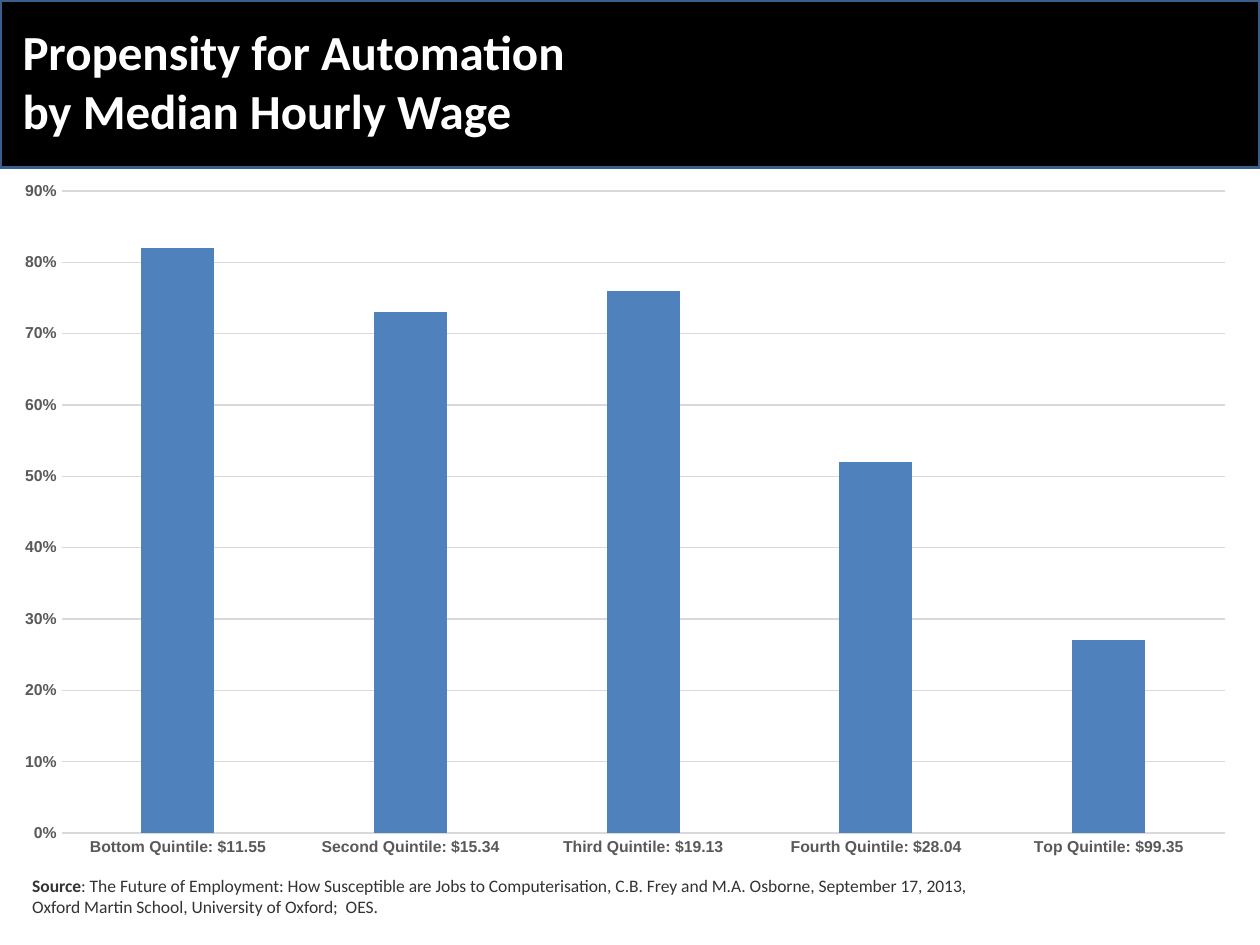
from copy import deepcopy

from pptx import Presentation
from pptx.chart.data import CategoryChartData
from pptx.dml.color import RGBColor
from pptx.enum.chart import XL_CHART_TYPE as ChartType, XL_TICK_MARK as Tick
from pptx.enum.shapes import MSO_SHAPE as Shape
from pptx.enum.text import MSO_ANCHOR as Anchor, PP_ALIGN as Align
from pptx.oxml.ns import qn
from pptx.util import Cm, Pt

BLACK = RGBColor(0x00, 0x00, 0x00)
WHITE = RGBColor(0xFF, 0xFF, 0xFF)
BAND_EDGE = RGBColor(0x3A, 0x5F, 0x8C)
BAR_BLUE = RGBColor(0x4F, 0x81, 0xBD)
GRID_GREY = RGBColor(0xD9, 0xD9, 0xD9)
AXIS_GREY = RGBColor(0x59, 0x59, 0x59)
SOURCE_GREY = RGBColor(0x33, 0x33, 0x33)

WAGE_GROUPS = {
    "Bottom Quintile: $11.55": 0.82,
    "Second Quintile: $15.34": 0.73,
    "Third Quintile: $19.13": 0.76,
    "Fourth Quintile: $28.04": 0.52,
    "Top Quintile: $99.35": 0.27,
}
SOURCE_LINES = [
    [("Source", True),
     (": The Future of Employment: How Susceptible are Jobs to Computerisation, "
      "C.B. Frey and M.A. Osborne, September 17, 2013,", False)],
    [("Oxford Martin School, University of Oxford;  OES.", False)],
]


def set_font(font, name, size, color, bold=False):
    font.name = name
    font.size = Pt(size)
    font.bold = bold
    font.color.rgb = color


def set_line(line, color, width):
    line.color.rgb = color
    line.width = Pt(width)


def add_band(s, width, height):
    sp = s.shapes.add_shape(Shape.RECTANGLE, 0, 0, width, height)
    sp.shadow.inherit = False
    sp.fill.solid()
    sp.fill.fore_color.rgb = BLACK
    set_line(sp.line, BAND_EDGE, 2)
    return sp


def set_title(s, text, band):
    sp = s.shapes.title
    sp.left, sp.top, sp.width, sp.height = Cm(0.2), Cm(0.3), Cm(20.32), Cm(2.64)
    tf = sp.text_frame
    tf.text = text
    tf.vertical_anchor = Anchor.MIDDLE
    p = tf.paragraphs[0]
    p.alignment = Align.LEFT
    for r in p.runs:
        set_font(r.font, "Calibri", 28, WHITE, True)
    for br in p._p.findall(qn("a:br")):
        br.append(deepcopy(p.runs[0]._r.rPr))
    band._element.addnext(sp._element)


def style_axis(axis):
    axis.major_tick_mark = axis.minor_tick_mark = Tick.NONE
    set_font(axis.tick_labels.font, "Arial", 9, AXIS_GREY, True)


def add_wage_chart(s):
    data = CategoryChartData(number_format="0%")
    data.categories = list(WAGE_GROUPS)
    data.add_series("Series 1", list(WAGE_GROUPS.values()))
    chart = s.shapes.add_chart(ChartType.COLUMN_CLUSTERED, 0, Cm(3.38),
                               Cm(25.2), Cm(14.17), data).chart
    chart.has_legend = False
    chart.has_title = False
    set_font(chart.font, "Arial", 10, BLACK)

    plot = chart.plots[0]
    plot.gap_width = 219
    plot.overlap = -27
    plot.vary_by_categories = False
    fill = plot.series[0].format.fill
    fill.solid()
    fill.fore_color.rgb = BAR_BLUE

    style_axis(chart.category_axis)
    set_line(chart.category_axis.format.line, GRID_GREY, 0.75)

    axis = chart.value_axis
    style_axis(axis)
    axis.minimum_scale, axis.maximum_scale, axis.major_unit = 0, 0.9, 0.1
    axis.tick_labels.number_format = "0%"
    axis.tick_labels.number_format_is_linked = False
    axis.format.line.fill.background()
    set_line(axis.major_gridlines.format.line, GRID_GREY, 0.75)


def add_source(s):
    tf = s.shapes.add_textbox(Cm(0.4), Cm(17.48), Cm(25), Cm(1.17)).text_frame
    tf.word_wrap = True
    tf.vertical_anchor = Anchor.MIDDLE
    for i, line in enumerate(SOURCE_LINES):
        p = tf.add_paragraph() if i else tf.paragraphs[0]
        for text, bold in line:
            r = p.add_run()
            r.text = text
            set_font(r.font, "Calibri", 10, SOURCE_GREY, bold)


def main():
    prs = Presentation()
    prs.slide_width, prs.slide_height = Cm(25.4), Cm(19.05)
    s = prs.slides.add_slide(prs.slide_layouts[5])
    band = add_band(s, prs.slide_width, Cm(3.38))
    set_title(s, "Propensity for Automation \vby Median Hourly Wage", band)
    add_wage_chart(s)
    add_source(s)
    prs.save("out.pptx")


if __name__ == "__main__":
    main()
